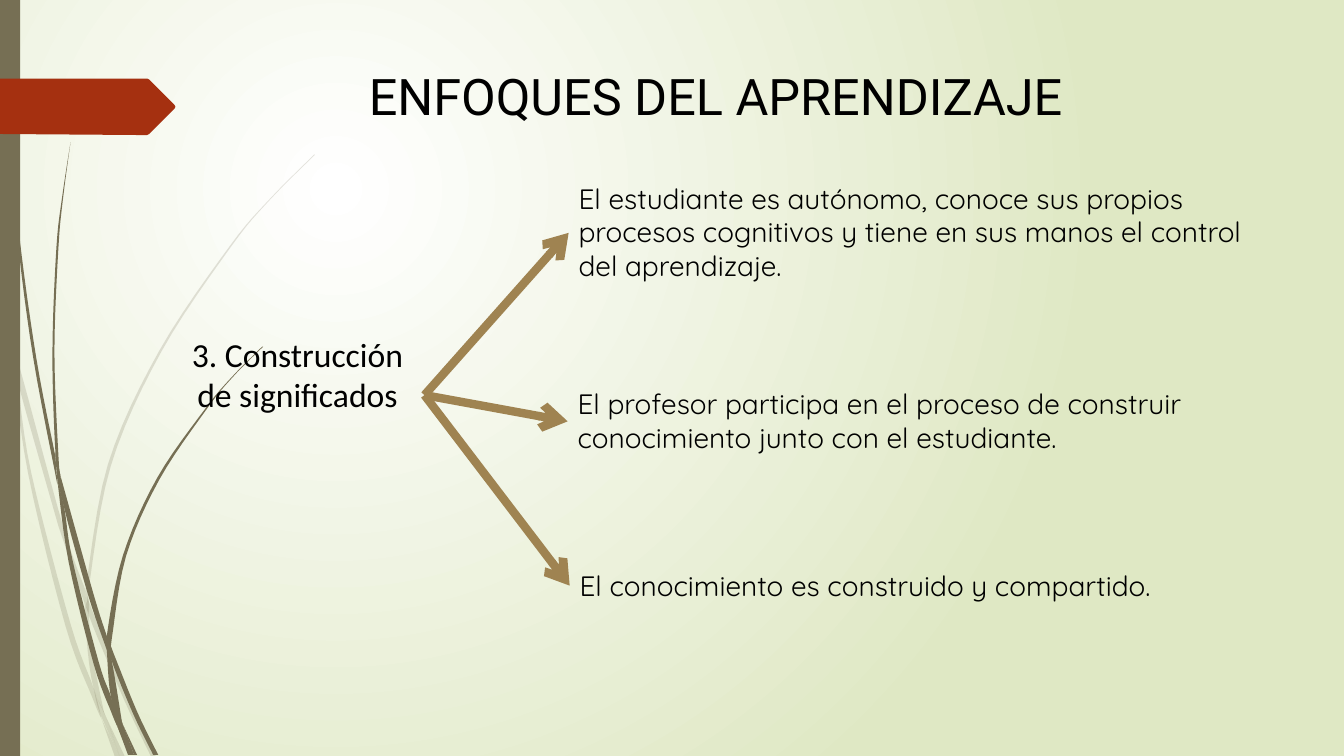
from dataclasses import dataclass

from lxml.etree import SubElement
from pptx import Presentation
from pptx.dml.color import RGBColor
from pptx.dml.fill import FillFormat
from pptx.enum.shapes import MSO_CONNECTOR, MSO_SHAPE
from pptx.enum.text import MSO_AUTO_SIZE, PP_ALIGN
from pptx.oxml.ns import qn
from pptx.slide import Slide
from pptx.util import Inches, Pt

COLORS = {
    "text": "000000",
    "stem": "766F54",
    "tag": "A53010",
    "arrow": "9F8351",
    "center": "FFFFFF",
    "edge": "DFE8C4",
}
CURVE_STEPS = 6
Point = tuple[float, float]
Edge = tuple[Point, ...]


@dataclass
class Blade:
    """A sliver of grass bounded by two curved edges, down one and back the other."""
    outward: Edge
    back: Edge


@dataclass
class Label:
    text: str
    left: float
    top: float
    width: float
    height: float
    size: int
    font: str
    align: PP_ALIGN = PP_ALIGN.LEFT


PALE_BLADES = [
    Blade(((0.11, 3.5), (0.09, 3.22), (0, 2.82)), ((0, 2.99), (0.1, 3.44))),
    Blade(((0.58, 5.22), (0.84, 5.99)),
          ((0.85, 5.86), (0.62, 5.2), (0.14, 3.45), (0.17, 3.76), (0.58, 5.22))),
    Blade(((0.88, 5.96), (0.88, 6.1), (1.23, 6.94), (1.5, 7.51)),
          ((1.55, 7.51), (1.27, 6.92), (0.92, 6.07))),
    Blade(((1.19, 7.51), (1.24, 7.51)), ((1.05, 7.11), (1.19, 7.51))),
    Blade(((1.01, 7.14), (0.93, 6.83), (0.7, 6.19), (0.31, 4.69), (0.17, 3.76), (0.11, 3.5)),
          ((0.11, 3.5), (0.28, 4.7), (0.65, 6.21), (0.92, 6.93), (1.01, 7.14))),
    Blade(((0.84, 5.99), (0.87, 6.46), (0.93, 6.83), (1.05, 7.11)),
          ((1.03, 7.06), (0.91, 6.46), (0.88, 6.1), (0.84, 5.99))),
    Blade(((0.88, 5.96), (0.88, 5.84), (1.1, 4.62), (1.6, 3.49), (2.29, 2.45), (2.68, 1.98),
           (3.12, 1.54)),
          ((3.12, 1.53), (2.68, 1.97), (2.28, 2.44), (1.58, 3.48), (1.07, 4.61), (0.85, 5.84))),
    Blade(((1.01, 7.14), (1.14, 7.51)), ((1.19, 7.51), (1.01, 7.14))),
    Blade(((0.88, 6.1), (0.88, 5.96), (0.85, 5.86)), ((0.84, 5.99), (0.88, 6.08))),
    Blade(((0.93, 6.83), (0.99, 7.07), (1.19, 7.51)), ((1.19, 7.51), (1.05, 7.11), (0.96, 6.92))),
]

DARK_BLADES = [
    Blade(((0.03, 0), (0.04, 0.48), (0.07, 1.1), (0.17, 2.33), (0.33, 3.55), (0.57, 4.81)),
          ((0.55, 4.53), (0.36, 3.55), (0.19, 2.32), (0.08, 1.09), (0.05, 0.48), (0.04, 0))),
    Blade(((0.6, 4.72), (0.64, 5.05), (0.88, 5.92), (1.06, 6.45)),
          ((1.06, 6.31), (0.93, 5.9), (0.6, 4.72))),
    Blade(((1.1, 6.41), (1.11, 6.56), (1.32, 7.08), (1.52, 7.49)),
          ((1.57, 7.49), (1.36, 7.06), (1.13, 6.49))),
    Blade(((0.57, 4.77), (0.68, 5.57), (0.93, 6.59), (1.11, 7.08), (1.17, 7.22)),
          ((1.16, 7.17), (1.1, 6.91), (0.98, 6.57), (0.72, 5.56), (0.64, 5.05), (0.57, 4.77))),
    Blade(((0.6, 4.72), (0.58, 4.53), (0.54, 3.49), (0.58, 2.45), (0.63, 1.93), (0.7, 1.41)),
          ((0.7, 1.41), (0.62, 1.93), (0.56, 2.45), (0.52, 3.49), (0.55, 4.49), (0.6, 4.72))),
    Blade(((1.33, 7.49), (1.36, 7.49)), ((1.22, 7.19), (1.33, 7.49))),
    Blade(((0.57, 4.77), (0.64, 5.05)), ((0.6, 4.72), (0.55, 4.49), (0.57, 4.77))),
    Blade(((1.11, 6.33), (1.25, 5.52), (1.58, 4.76), (2.05, 4.06), (2.31, 3.74), (2.61, 3.44)),
          ((2.6, 3.44), (2.31, 3.73), (2.04, 4.05), (1.56, 4.74), (1.22, 5.51), (1.06, 6.31),
           (1.1, 6.41))),
    Blade(((1.17, 7.22), (1.27, 7.49)), ((1.31, 7.49), (1.17, 7.22))),
    Blade(((1.06, 6.45), (1.1, 6.91), (1.22, 7.19)), ((1.21, 7.16), (1.11, 6.56), (1.06, 6.45))),
    Blade(((1.06, 6.45), (1.11, 6.56)), ((1.1, 6.41), (1.06, 6.31), (1.06, 6.45))),
    Blade(((1.1, 6.91), (1.17, 7.22), (1.3, 7.49)), ((1.33, 7.49), (1.22, 7.19), (1.1, 6.91))),
]

TAG_OUTLINE = [(0, 0.78), (1.46, 0.78), (1.48, 0.79), (1.73, 1.04), (1.74, 1.06),
               (1.73, 1.08), (1.48, 1.33), (1.46, 1.34), (1.36, 1.34), (0, 1.33)]

LABELS = [
    Label("ENFOQUES DEL APRENDIZAJE", 2.31, 0.6, 9.58, 0.71, 36, "Roboto", PP_ALIGN.CENTER),
    Label("3. Construcción de significados", 1.69, 3.26, 2.52, 1.31, 24, "Calibri",
          PP_ALIGN.CENTER),
    Label("El estudiante es autónomo, conoce sus propios procesos cognitivos y tiene en sus "
          "manos el control del aprendizaje.", 5.64, 1.75, 6.77, 1.11, 20, "Quicksand"),
    Label("El profesor participa en el proceso de construir conocimiento junto con el "
          "estudiante.", 5.63, 3.79, 6.77, 0.77, 20, "Quicksand"),
    Label("El conocimiento es construido y compartido.", 5.65, 5.59, 6.77, 0.44, 20,
          "Quicksand"),
]
ARROW_START = (4.21, 3.92)
ARROW_ENDS = [(5.64, 2.31), (5.63, 4.18), (5.65, 5.81)]


def color(name: str) -> RGBColor:
    return RGBColor.from_string(COLORS[name])


def smooth(edge: Edge) -> list[Point]:
    """Sample a Catmull-Rom curve through the points of an edge."""
    if len(edge) < 3:
        return list(edge)
    padded = (edge[0], *edge, edge[-1])
    samples = []
    for a, b, c, d in zip(padded, padded[1:], padded[2:], padded[3:]):
        for step in range(CURVE_STEPS):
            t = step / CURVE_STEPS
            samples.append(tuple(
                q + t / 2 * (r - p + t * (2 * p - 5 * q + 4 * r - s
                                          + t * (3 * q - p - 3 * r + s)))
                for p, q, r, s in zip(a, b, c, d)))
    return samples + [edge[-1]]


def paint(shape, color_name: str) -> None:
    shape.shadow.inherit = False
    shape.fill.solid()
    shape.fill.fore_color.rgb = color(color_name)
    shape.line.fill.background()


def add_outline(slide: Slide, points: list[Point], color_name: str, opacity: int = 100) -> None:
    corners = [(Inches(x), Inches(y)) for x, y in points]
    builder = slide.shapes.build_freeform(*corners[0])
    builder.add_line_segments(corners[1:], close=True)
    shape = builder.convert_to_shape()
    paint(shape, color_name)
    if opacity < 100:
        fill_color = shape._element.spPr.find(f"{qn('a:solidFill')}/{qn('a:srgbClr')}")
        SubElement(fill_color, qn("a:alpha"), val=str(opacity * 1000))


def add_label(slide: Slide, label: Label) -> None:
    box = slide.shapes.add_textbox(*map(Inches, (label.left, label.top, label.width, label.height)))
    text_frame = box.text_frame
    text_frame.word_wrap = True
    text_frame.auto_size = MSO_AUTO_SIZE.SHAPE_TO_FIT_TEXT
    text_frame.text = label.text
    paragraph = text_frame.paragraphs[0]
    paragraph.alignment = label.align
    font = paragraph.runs[0].font
    font.name, font.size = label.font, Pt(label.size)
    font.color.rgb = color("text")


def add_arrow(slide: Slide, start: Point, end: Point) -> None:
    arrow = slide.shapes.add_connector(MSO_CONNECTOR.STRAIGHT, *map(Inches, (*start, *end)))
    arrow.line.width = Pt(6)
    arrow.line.color.rgb = color("arrow")
    SubElement(arrow.line._get_or_add_ln(), qn("a:tailEnd"), type="arrow")
    SubElement(arrow._element.spPr, qn("a:effectLst"))


def set_background(slide: Slide) -> None:
    """Fill with a circular gradient centred in the upper left quarter."""
    fill: FillFormat = slide.background.fill
    fill.gradient()
    for stop, name in zip(fill.gradient_stops, ("center", "edge")):
        stop.color.rgb = color(name)
    gradient = next(slide._element.iter(qn("a:gradFill")))
    gradient.remove(gradient.find(qn("a:lin")))
    circle = SubElement(gradient, qn("a:path"), path="circle")
    SubElement(circle, qn("a:fillToRect"), l="50000", t="50000", r="100000", b="100000")


def main() -> None:
    presentation = Presentation()
    presentation.slide_width, presentation.slide_height = Inches(13.33), Inches(7.5)
    slide = presentation.slides.add_slide(presentation.slide_layouts[6])
    set_background(slide)
    for blades, opacity in ((PALE_BLADES, 20), (DARK_BLADES, 100)):
        for blade in blades:
            add_outline(slide, smooth(blade.outward) + smooth(blade.back), "stem", opacity)
    side_bar = slide.shapes.add_shape(MSO_SHAPE.RECTANGLE, 0, 0, Inches(0.2), Inches(7.5))
    paint(side_bar, "stem")
    add_outline(slide, TAG_OUTLINE, "tag")
    for label in LABELS:
        add_label(slide, label)
    for end in ARROW_ENDS:
        add_arrow(slide, ARROW_START, end)
    presentation.save("out.pptx")


if __name__ == "__main__":
    main()
